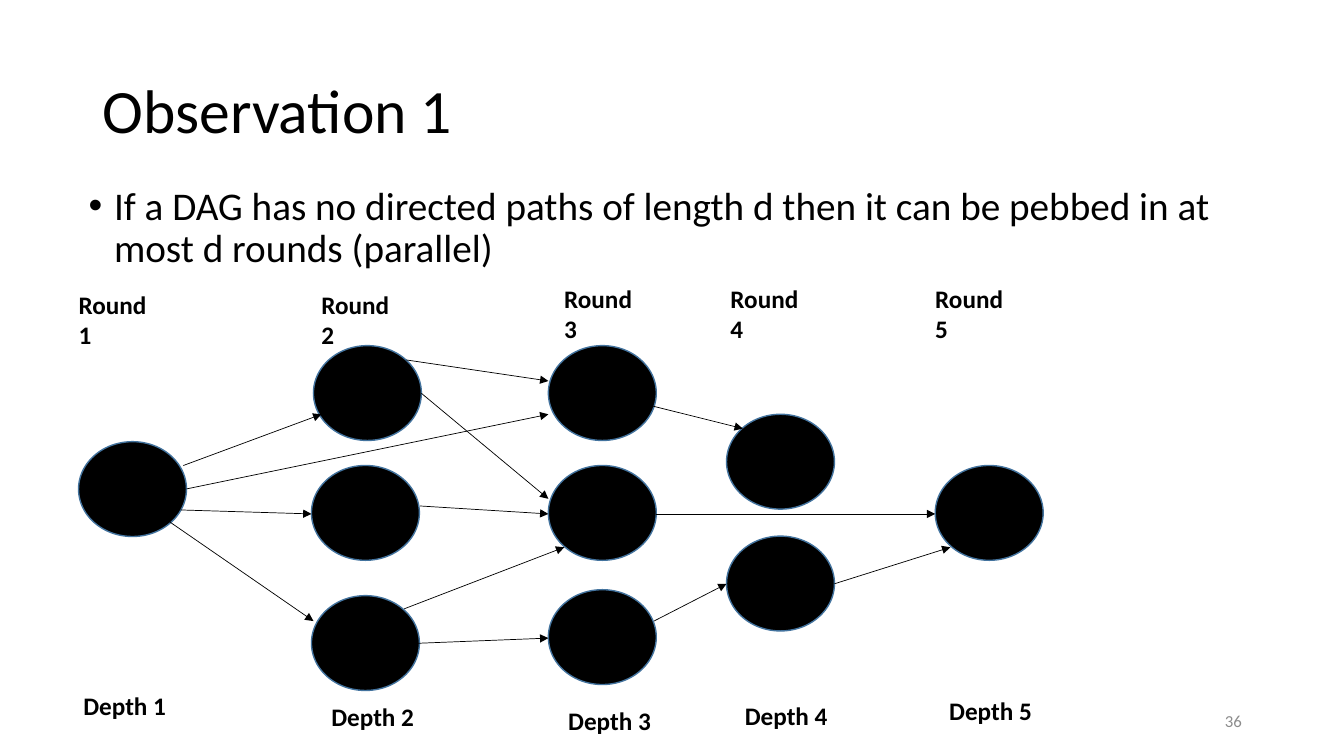
from lxml import etree
from pptx import Presentation
from pptx.dml.color import RGBColor
from pptx.enum.shapes import MSO_CONNECTOR, MSO_SHAPE
from pptx.enum.text import MSO_ANCHOR, MSO_AUTO_SIZE, PP_ALIGN
from pptx.oxml.ns import qn
from pptx.util import Cm, Pt

OVAL = MSO_SHAPE.OVAL
STRAIGHT = MSO_CONNECTOR.STRAIGHT
TOP, MIDDLE = MSO_ANCHOR.TOP, MSO_ANCHOR.MIDDLE
LEFT, RIGHT = PP_ALIGN.LEFT, PP_ALIGN.RIGHT
NO_FIT = MSO_AUTO_SIZE.NONE

NODE_COLUMNS = [
    [(1.98, 11.13)],
    [(7.9, 8.71), (7.85, 11.73), (7.85, 15.01)],
    [(13.82, 8.71), (13.82, 11.73), (13.82, 14.86)],
    [(18.31, 10.44), (18.31, 13.51)],
    [(23.57, 11.73)],
]
EDGES = [
    (4.55, 12.85, 7.85, 12.95),
    (4.29, 13.16, 7.9, 15.65),
    (10.62, 9.91, 13.82, 12.57),
    (10.59, 12.75, 13.82, 12.95),
    (10.52, 16.21, 13.82, 16.08),
    (16.36, 10.21, 18.72, 10.8),
    (10.19, 15.34, 14.22, 13.79),
    (16.48, 15.65, 18.31, 14.71),
    (16.54, 12.95, 23.57, 12.95),
    (21.03, 14.71, 23.95, 13.79),
    (4.7, 12.32, 13.82, 10.44),
    (10.24, 9.07, 13.82, 9.6),
    (4.62, 11.73, 8.1, 10.44),
]
ROUND_LABELS = [(1.73, 7.16), (7.85, 7.16), (13.97, 7.01), (18.16, 7.01), (23.32, 7.01)]
DEPTH_LABELS = [(1.85, 17.27), (8.1, 17.55), (14.07, 17.65), (18.52, 17.53), (23.67, 17.4)]


def color(hex_code):
    return RGBColor.from_string(hex_code)


class GraphSlide:
    font = "Calibri"
    ink = "000000"
    outline = "43739E"
    muted = "8C8C8C"
    node_size = (2.72, 2.39)

    def __init__(self, deck):
        self.slide = deck.slides.add_slide(deck.slide_layouts[1])

    def add_text(self, paragraph, text, size, ink=None, bold=False):
        run = paragraph.add_run()
        run.text = text
        run.font.name = self.font
        run.font.size = Pt(size)
        run.font.bold = bold
        run.font.color.rgb = color(ink or self.ink)

    def place(self, holder, box, anchor):
        holder.left, holder.top, holder.width, holder.height = map(Cm, box)
        frame = holder.text_frame
        frame.auto_size = NO_FIT
        frame.word_wrap = True
        frame.vertical_anchor = anchor
        paragraph = frame.paragraphs[0]
        paragraph.alignment = LEFT
        paragraph.line_spacing = 0.9
        return paragraph

    def title(self, text):
        heading = self.place(self.slide.shapes.title, (2.33, 1.01, 29.21, 3.68), MIDDLE)
        self.add_text(heading, text, 44)

    def bullet(self, text):
        statement = self.place(self.slide.placeholders[1], (1.98, 4.57, 29.21, 12.09), TOP)
        statement.space_before = Pt(10)
        properties = statement._p.get_or_add_pPr()
        properties.set("marL", str(Cm(0.64)))
        properties.set("indent", str(Cm(-0.64)))
        etree.SubElement(properties, qn("a:buFont"), typeface="Arial")
        etree.SubElement(properties, qn("a:buChar"), char="•")
        self.add_text(statement, text, 28)

    def page_number(self, text):
        box = self.slide.shapes.add_textbox(Cm(23.93), Cm(17.65), Cm(7.62), Cm(1.01))
        box.text_frame.word_wrap = True
        box.text_frame.vertical_anchor = MIDDLE
        number = box.text_frame.paragraphs[0]
        number.alignment = RIGHT
        self.add_text(number, text, 12, self.muted)

    def label(self, text, left, top):
        box = self.slide.shapes.add_textbox(Cm(left), Cm(top), Cm(2.67), Cm(1.03))
        box.text_frame.word_wrap = False
        self.add_text(box.text_frame.paragraphs[0], text, 18, bold=True)

    def node(self, left, top):
        oval = self.slide.shapes.add_shape(OVAL, Cm(left), Cm(top), *map(Cm, self.node_size))
        oval.shadow.inherit = False
        oval.fill.solid()
        oval.fill.fore_color.rgb = color(self.ink)
        oval.line.color.rgb = color(self.outline)
        oval.line.width = Pt(1)

    def edge(self, *ends):
        arrow = self.slide.shapes.add_connector(STRAIGHT, *map(Cm, ends))
        arrow.line.color.rgb = color(self.ink)
        arrow.line.width = Pt(0.5)
        properties = arrow._element.spPr
        etree.SubElement(properties.find(qn("a:ln")), qn("a:tailEnd"), type="triangle")
        etree.SubElement(properties, qn("a:effectLst"))


def main():
    deck = Presentation()
    deck.slide_width, deck.slide_height = Cm(33.87), Cm(19.05)
    graph = GraphSlide(deck)
    graph.title("Observation 1")
    graph.bullet(
        "If a DAG has no directed paths of length d then it can be pebbed in at "
        "most d rounds (parallel)"
    )
    graph.page_number("36")
    for column in NODE_COLUMNS:
        for corner in column:
            graph.node(*corner)
    for ends in EDGES:
        graph.edge(*ends)
    for word, corners in (("Depth", DEPTH_LABELS), ("Round", ROUND_LABELS)):
        for step, corner in enumerate(corners, 1):
            graph.label(f"{word} {step}", *corner)
    deck.save("out.pptx")


if __name__ == "__main__":
    main()
